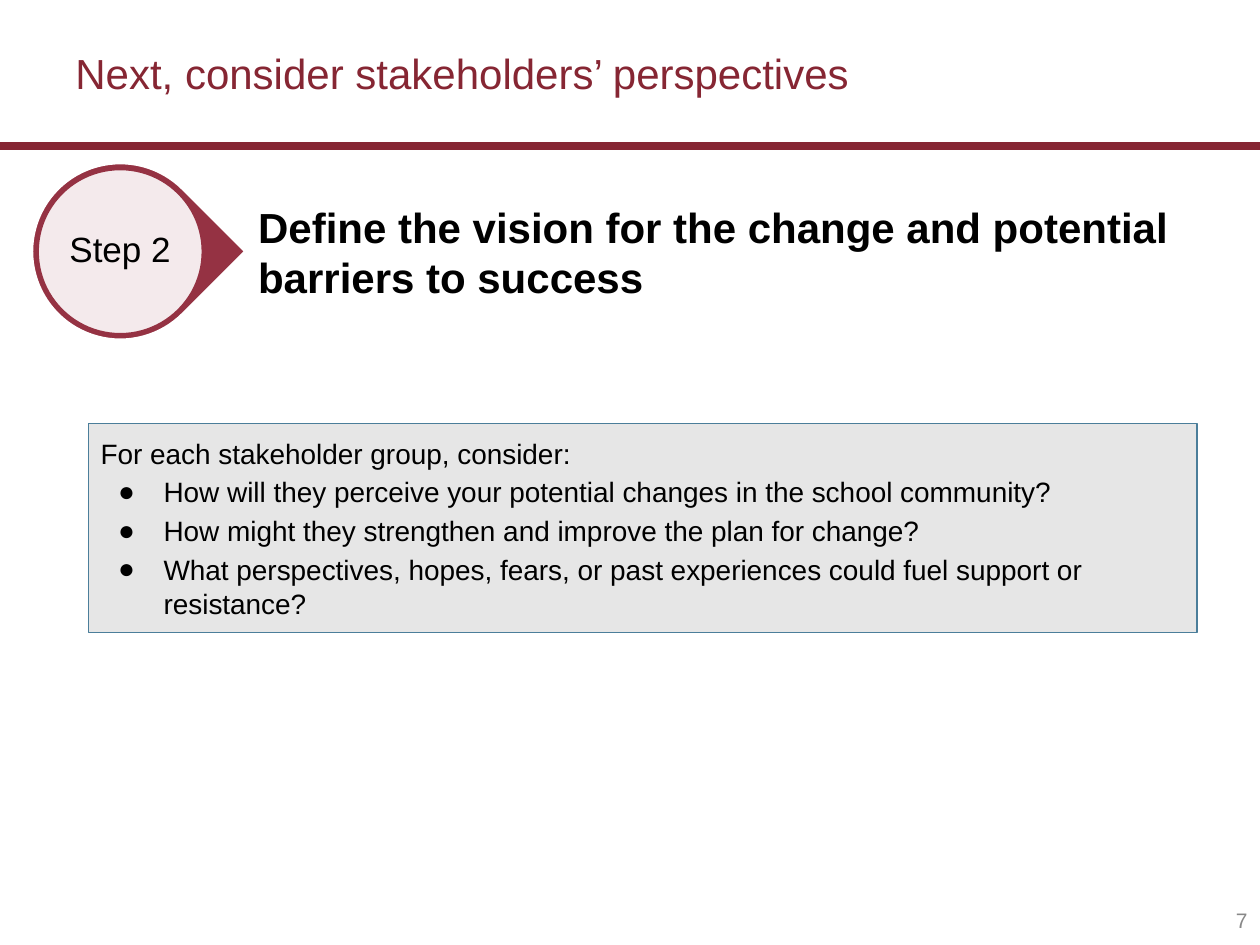
from lxml import etree
from pptx import Presentation
from pptx.dml.color import RGBColor
from pptx.enum.shapes import MSO_CONNECTOR, MSO_SHAPE
from pptx.enum.text import MSO_ANCHOR, PP_ALIGN
from pptx.oxml.ns import qn
from pptx.util import Pt

LEFT, CENTER, RIGHT = PP_ALIGN.LEFT, PP_ALIGN.CENTER, PP_ALIGN.RIGHT
MIDDLE = MSO_ANCHOR.MIDDLE
RECT, TEAR, OVAL = MSO_SHAPE.RECTANGLE, MSO_SHAPE.TEAR, MSO_SHAPE.OVAL
CRIMSON, ROSE = "862633", "953243"
BULLET_INDENT, BULLET_HANG = 36, -25.92


def rgb(value):
    return RGBColor.from_string(value)


def write(s, lines, size, color="000000", bold=False, align=LEFT, inset=(7.2, 7.2)):
    """Fill a shape with paragraphs; inset is (horizontal, vertical) in points."""
    tf = s.text_frame
    x, y = map(Pt, inset)
    frame = dict(word_wrap=True, vertical_anchor=MIDDLE, margin_left=x,
                 margin_right=x, margin_top=y, margin_bottom=y)
    for name, value in frame.items():
        setattr(tf, name, value)
    for i, line in enumerate(lines):
        p = tf.paragraphs[0] if i == 0 else tf.add_paragraph()
        p.alignment = align
        r = p.add_run()
        r.text = line
        font = dict(name="Arial", size=Pt(size), bold=bold)
        for name, value in font.items():
            setattr(r.font, name, value)
        r.font.color.rgb = rgb(color)
    return tf.paragraphs


prs = Presentation()
prs.slide_width, prs.slide_height = Pt(720), Pt(540)
slide = prs.slides.add_slide(prs.slide_layouts[6])
shapes = slide.shapes

# Header rule, title and page number
rule = shapes.add_connector(MSO_CONNECTOR.STRAIGHT, Pt(0), Pt(83.5), Pt(720), Pt(83.5))
rule.line.color.rgb = rgb(CRIMSON)
rule.line.width = Pt(5)
etree.SubElement(rule.element.spPr, qn("a:effectLst"))

page = shapes.add_textbox(Pt(552), Pt(511.2), Pt(168), Pt(28.8))
write(page, ["7"], 12, "888888", align=RIGHT, inset=(7.2, 3.6))
title = shapes.add_textbox(Pt(36), Pt(0), Pt(648), Pt(83.5))
write(title, ["Next, consider stakeholders’ perspectives"], 24, CRIMSON)

# Panel, teardrop and the disc on top of it
outlines = {}
for name, kind, box, fill, line, width in [
    ("panel", RECT, (50.4, 242, 633.6, 119.4), "E6E6E6", "4B7E9A", 0.75),
    ("drop", TEAR, (18, 92.9, 101.5, 101.5), ROSE, "FFFFFF", 2),
    ("disc", OVAL, (21.2, 96.3, 95, 95), "FFFFFF", ROSE, 2),
]:
    s = shapes.add_shape(kind, *map(Pt, box))
    s.shadow.inherit = False
    s.fill.solid()
    s.fill.fore_color.rgb = rgb(fill)
    s.line.color.rgb = rgb(line)
    s.line.width = Pt(width)
    outlines[name] = s

outlines["drop"].rotation = 45
disc_color = outlines["disc"].element.spPr.find(qn("a:solidFill"))[0]
etree.SubElement(disc_color, qn("a:alpha"), val="90000")

# Step label and heading
step = shapes.add_textbox(Pt(34.6), Pt(109.6), Pt(68), Pt(68))
write(step, ["Step 2"], 20, align=CENTER, inset=(2, 2))[0].line_spacing = 0.9
vision = shapes.add_textbox(Pt(140.4), Pt(133.2), Pt(575.3), Pt(21.6))
write(vision, ["Define the vision for the change and potential barriers to success"],
      24, bold=True)

# Questions in the panel
questions = write(outlines["panel"], [
    "For each stakeholder group, consider:",
    "How will they perceive your potential changes in the school community?",
    "How might they strengthen and improve the plan for change?",
    "What perspectives, hopes, fears, or past experiences could fuel support or resistance?",
], 16, inset=(7.2, 14.4))
for p in questions[1:]:
    p.space_before = Pt(3)
    pPr = p._p.get_or_add_pPr()
    pPr.set("marL", str(Pt(BULLET_INDENT)))
    pPr.set("indent", str(Pt(BULLET_HANG)))
    etree.SubElement(pPr, qn("a:buFont"), typeface="Arial")
    etree.SubElement(pPr, qn("a:buChar"), char="●")
questions[-1].space_after = Pt(3)

prs.save("out.pptx")
